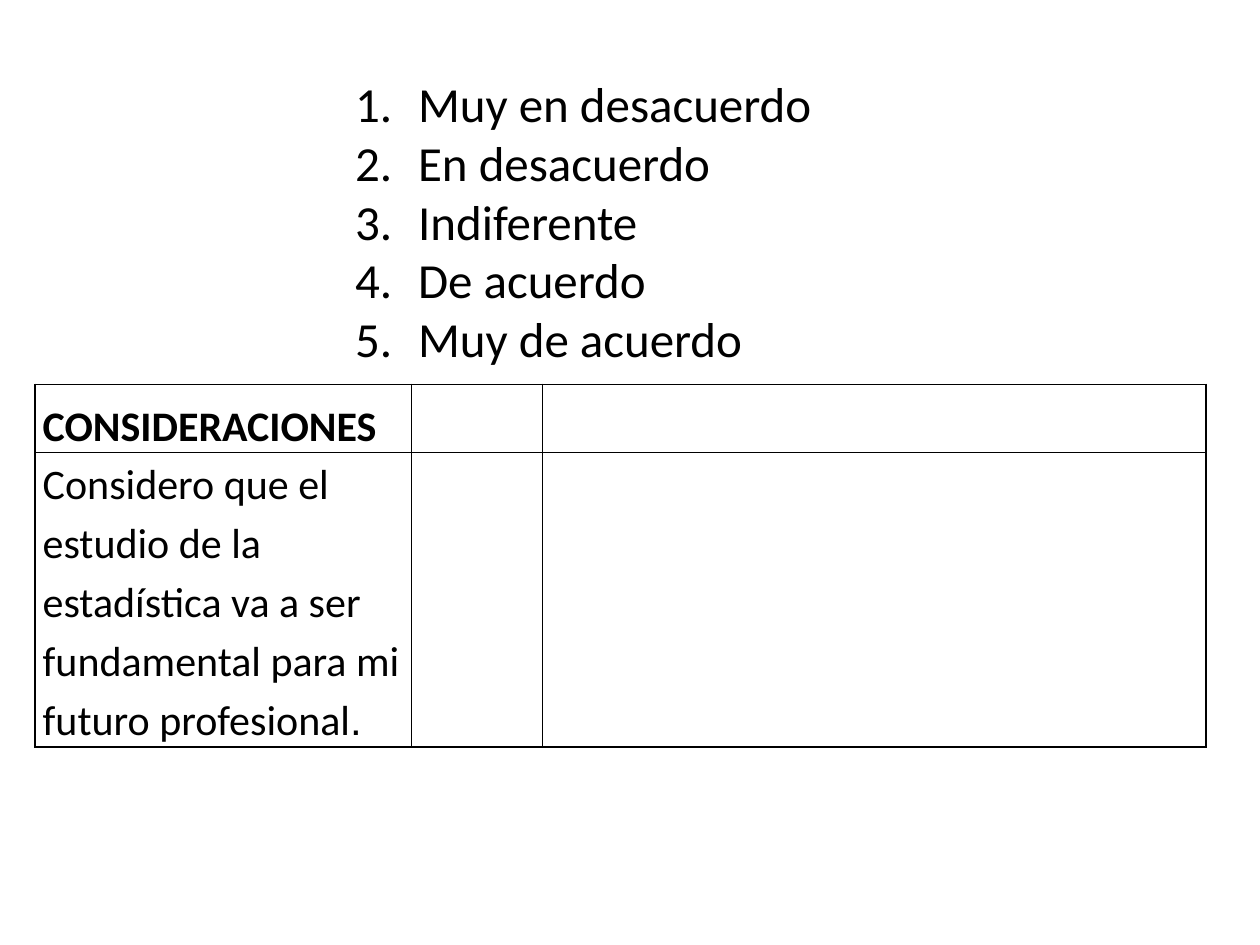
from lxml import etree
from pptx import Presentation
from pptx.dml.color import RGBColor
from pptx.enum.text import MSO_ANCHOR, MSO_AUTO_SIZE
from pptx.oxml.ns import qn
from pptx.util import Cm, Pt

TOP, MIDDLE, BOTTOM = MSO_ANCHOR.TOP, MSO_ANCHOR.MIDDLE, MSO_ANCHOR.BOTTOM
FIT_SHAPE = MSO_AUTO_SIZE.SHAPE_TO_FIT_TEXT

# Content
SCALE = ["Muy en desacuerdo", "En desacuerdo", "Indiferente", "De acuerdo", "Muy de acuerdo"]
STATEMENT = ("Considero que el estudio de la estadística va a ser "
             "fundamental para mi futuro profesional")
# Each row: height in cm, anchor, and the (text, format) spans of its first cell
ROWS = [
    (1.37, BOTTOM, [("CONSIDERACIONES", {"bold": True})]),
    (5.92, TOP, [(STATEMENT, {}), (".", {"name": "Arial"})]),
]
COLUMN_WIDTHS = [7.59, 2.64, 13.37]

THEME = {
    "ink": RGBColor(0, 0, 0),
    "paper": RGBColor(255, 255, 255),
    "scale": {"name": "Calibri", "size": Pt(28), "bold": False},
    "table": {"name": "Calibri", "size": Pt(24), "bold": False},
    "border": Pt(1),
}


def set_all(target, values):
    for name, value in values.items():
        setattr(target, name, value)


def add_span(para, text, font):
    span = para.add_run()
    span.text = text
    set_all(span.font, font)
    span.font.color.rgb = THEME["ink"]


def number_para(para, indent):
    props = para._p.get_or_add_pPr()
    props.set("marL", str(indent))
    props.set("indent", str(-indent))
    etree.SubElement(props, qn("a:buFont"), typeface="+mj-lt")
    etree.SubElement(props, qn("a:buAutoNum"), type="arabicPeriod")


def style_cell(cell):
    props = cell._tc.get_or_add_tcPr()
    for side in ("a:lnL", "a:lnR", "a:lnT", "a:lnB"):
        line = etree.SubElement(props, qn(side), w=str(THEME["border"]))
        fill = etree.SubElement(line, qn("a:solidFill"))
        etree.SubElement(fill, qn("a:srgbClr"), val=str(THEME["ink"]))
    cell.fill.solid()
    cell.fill.fore_color.rgb = THEME["paper"]


def add_considerations(page):
    heights = [row[0] for row in ROWS]
    table = page.shapes.add_table(len(ROWS), len(COLUMN_WIDTHS), Cm(0.71), Cm(7.75),
                                  Cm(sum(COLUMN_WIDTHS)), Cm(sum(heights))).table
    set_all(table, {"first_row": False, "horz_banding": False})
    for column, width in zip(table.columns, COLUMN_WIDTHS):
        column.width = Cm(width)
    for index, (height, anchor, spans) in enumerate(ROWS):
        table.rows[index].height = Cm(height)
        for cell in table.rows[index].cells:
            style_cell(cell)
        label = table.cell(index, 0)
        set_all(label, {"vertical_anchor": anchor, "margin_left": Cm(0.15),
                        "margin_right": Cm(0.15), "margin_top": 0, "margin_bottom": 0})
        para = label.text_frame.paragraphs[0]
        para.line_spacing = 1.15
        for text, changes in spans:
            add_span(para, text, {**THEME["table"], **changes})


def add_scale(page):
    box = page.shapes.add_textbox(Cm(6.91), Cm(1.32), Cm(12.6), Cm(6.25))
    frame = box.text_frame
    set_all(frame, {"word_wrap": True, "auto_size": FIT_SHAPE, "vertical_anchor": MIDDLE})
    for index, answer in enumerate(SCALE):
        para = frame.add_paragraph() if index else frame.paragraphs[0]
        number_para(para, Cm(1.27))
        add_span(para, answer, THEME["scale"])


def main():
    deck = Presentation()
    set_all(deck, {"slide_width": Cm(25.4), "slide_height": Cm(19.05)})
    page = deck.slides.add_slide(deck.slide_layouts[6])
    # Questionnaire table, then the answer scale above it
    add_considerations(page)
    add_scale(page)
    deck.save("out.pptx")


if __name__ == "__main__":
    main()
